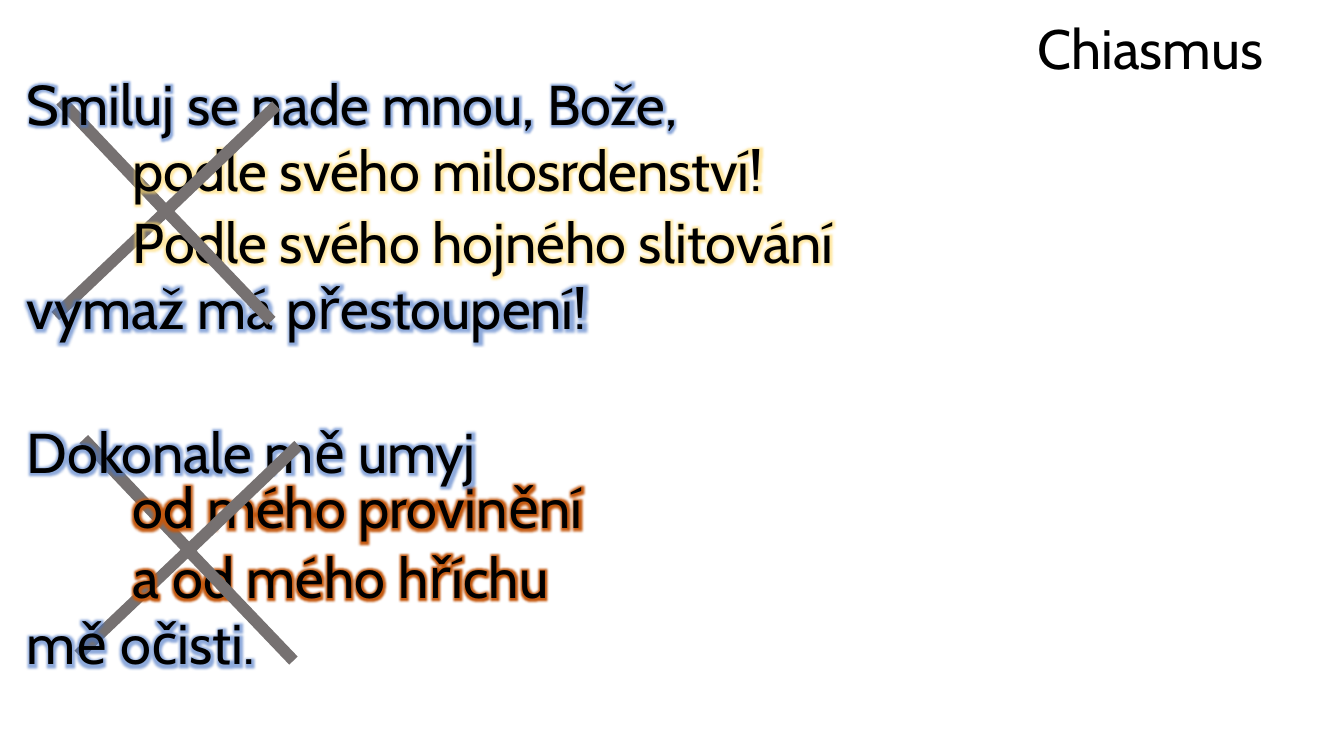
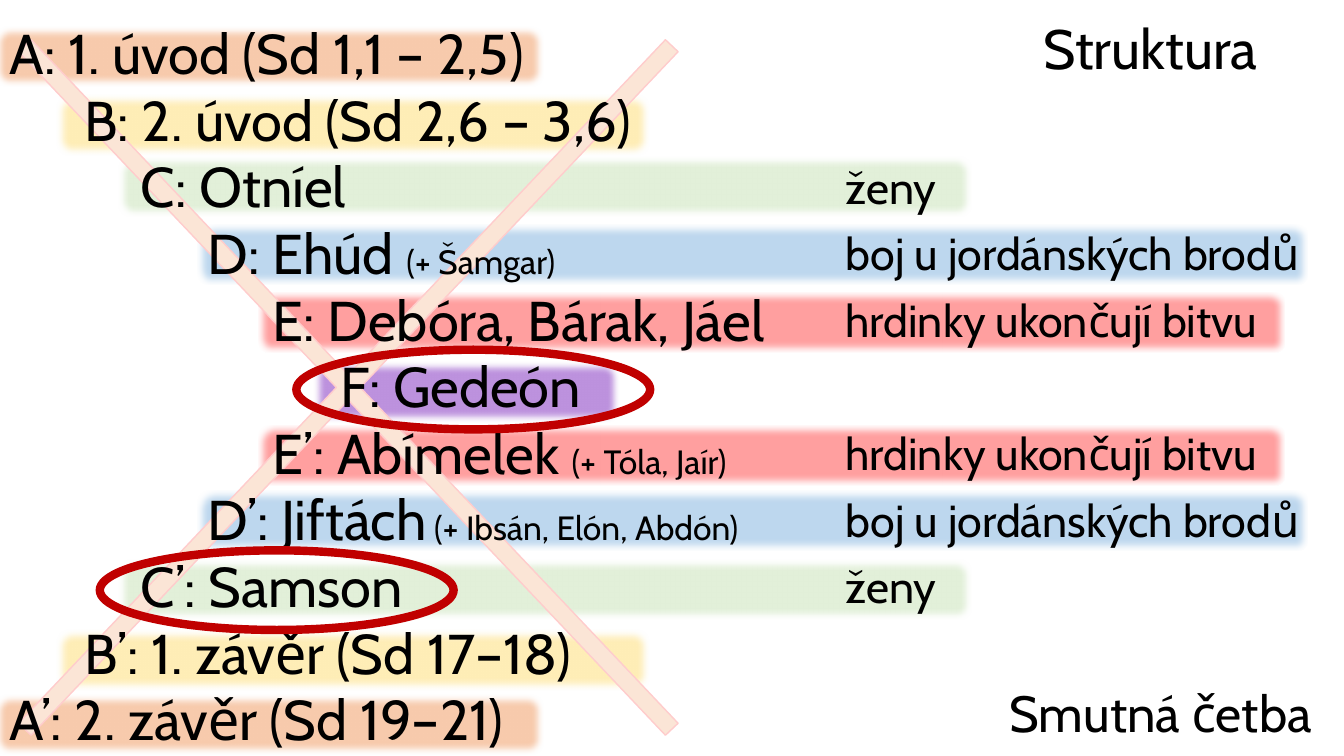
from lxml import etree
from pptx import Presentation
from pptx.dml.color import RGBColor
from pptx.enum.shapes import MSO_SHAPE as Preset
from pptx.enum.text import MSO_ANCHOR as Anchor, PP_ALIGN as Align
from pptx.oxml.ns import qn
from pptx.util import Pt

FONT = "Cabin"
COLOURS = {
    "text": "000000", "cross": "767171", "ring": "C00000",
    "big_cross": "FBE5D6", "big_cross_edge": "FFCCCC",
    "blue_glow": "4472C4", "yellow_glow": "FFD966", "orange_glow": "C55A11",
    "A": "F8CBAD", "B": "FFEEB7", "C": "E2F0D9",
    "D": "BDD7EE", "E": "FF9F9F", "F": "BD92DE",
}
TITLE_BOX = (700.5, 16.5, 242.5, 41)

# Slide 1: verse lines as (text, top, glow); yellow and orange lines are indented
VERSES = [
    ("podle svého milosrdenství!", 96.5, "yellow_glow"),
    ("Podle svého hojného slitování", 148.3, "yellow_glow"),
    ("vymaž má přestoupení!", 195.1, "blue_glow"),
    ("Smiluj se nade mnou, Bože,", 49.7, "blue_glow"),
    ("od mého provinění", 337.7, "orange_glow"),
    ("a od mého hříchu", 387.4, "orange_glow"),
    ("mě očisti.", 434.9, "blue_glow"),
    ("Dokonale mě umyj", 298.1, "blue_glow"),
]
VERSE_PLACES = {"blue_glow": (12.2, 881.3), "yellow_glow": (87.8, 535.7),
                "orange_glow": (87.8, 535.7)}
GLOW_ALPHA = {"blue_glow": 60, "yellow_glow": 60, "orange_glow": 100}

# Each cross is two angles whose corners meet: (left, top) of either half
ANGLE_SIZE = 113
LEFT_ANGLES = [(4.3, 334.1), (-12.2, 92.2)]
RIGHT_ANGLES = [(136.1, 95.8), (151.9, 338.4)]

# Slide 2: rows as (level, label, small addition, theme, label width, band top)
ROWS = [
    ("A", "A: 1. úvod (Sd 1,1 – 2,5)", "", "", 411, 18.7),
    ("B", "B: 2. úvod (Sd 2,6 – 3,6)", "", "", 427, 67.7),
    ("C", "C: Otníel", "", "ženy", 187, 111.6),
    ("D", "D: Ehúd ", "(+ Šamgar)", "boj u jordánských brodů", 366, 160.2),
    ("E", "E: Debóra, Bárak, Jáel", "", "hrdinky ukončují bitvu", 393, 208.8),
    ("F", "F: Gedeón", "", "", 187, 258.5),
    ("E", "E’: Abímelek ", "(+ Tóla, Jaír)", "hrdinky ukončují bitvu", 444, 303.8),
    ("D", "D’: Jiftách", " (+ Ibsán, Elón, Abdón)", "boj u jordánských brodů", 433, 350.3),
    ("C", "C’: Samson", "", "ženy", 217, 399.6),
    ("B", "B’: 1. závěr (Sd 17–18)", "", "", 382, 450),
    ("A", "A’: 2. závěr (Sd 19–21)", "", "", 423, 496.1),
]
ROW_TOP, ROW_STEP, ROW_HEIGHT = 16.5, 47.6, 47.5
LABEL_LEFT = {"A": 0, "B": 53.3, "C": 93.6, "D": 141.1, "E": 187.9, "F": 236.2}
BANDS = {"A": (-3.6, 391.7), "B": (40.3, 423.4), "C": (85, 609.1),
         "D": (141.1, 792.7), "E": (184.3, 733), "F": (223.9, 218.9)}
BAND_HEIGHT = 43.2
THEME_LEFT, THEME_WIDTH = 596.9, 342.7
RINGS = [(211.7, 249.8), (71.3, 393.1)]
CLOSING = ("Smutná četba", (707.8, 493.9, 242.6, 41))


def rgb(name):
    return RGBColor.from_string(COLOURS[name])


def add_effect(properties, tag, radius, colour=None, alpha=100):
    """Add a glow or a soft edge; radius in points, alpha in percent."""
    effects = etree.SubElement(properties, qn("a:effectLst"))
    effect = etree.SubElement(effects, qn("a:" + tag), rad=str(int(Pt(radius))))
    if colour:
        tint = etree.SubElement(effect, qn("a:srgbClr"), val=COLOURS[colour])
        etree.SubElement(tint, qn("a:alpha"), val=str(alpha * 1000))


def add_text(slide, box, runs, align=Align.LEFT, spacing=0.9, glow=None):
    """Add one line of text; runs are (text, size) pairs."""
    frame = slide.shapes.add_textbox(*map(Pt, box)).text_frame
    frame.word_wrap = True
    frame.vertical_anchor = Anchor.MIDDLE
    line = frame.paragraphs[0]
    for key, value in {"alignment": align, "line_spacing": spacing}.items():
        setattr(line, key, value)
    for text, size in runs:
        run = line.add_run()
        run.text = text
        run.font.color.rgb = rgb("text")
        if glow:
            add_effect(run.font._rPr, "glow", 8, glow, GLOW_ALPHA[glow])
        for key, value in {"name": FONT, "size": Pt(size)}.items():
            setattr(run.font, key, value)


def add_figure(slide, preset, box, fill=None, edge=None, edge_width=1, adjust=(), turn=0):
    figure = slide.shapes.add_shape(preset, *map(Pt, box))
    for index, value in enumerate(adjust):
        figure.adjustments[index] = value
    figure.rotation = turn
    if fill:
        figure.fill.solid()
        figure.fill.fore_color.rgb = rgb(fill)
    else:
        figure.fill.background()
    if edge:
        figure.line.color.rgb = rgb(edge)
        figure.line.width = Pt(edge_width)
    else:
        figure.line.fill.background()
    return figure


def add_angles(slide, corners, turn, adjust):
    """Add L shapes; the half frame has the same two adjustments."""
    for left, top in corners:
        angle = add_figure(slide, Preset.HALF_FRAME, (left, top, ANGLE_SIZE, ANGLE_SIZE),
                           "cross", adjust=adjust, turn=turn)
        angle._element.spPr.find(qn("a:prstGeom")).set("prst", "corner")
        angle.shadow.inherit = False


def new_slide(deck, title):
    slide = deck.slides.add_slide(deck.slide_layouts[6])
    add_text(slide, TITLE_BOX, [(title, 39.6)], Align.CENTER)
    return slide


def build_chiasmus(deck):
    slide = new_slide(deck, "Chiasmus")
    add_angles(slide, LEFT_ANGLES, 226.5, (0.075, 0.071))
    for text, top, glow in VERSES:
        left, width = VERSE_PLACES[glow]
        add_text(slide, (left, top, width, 54), [(text, 40)], glow=glow)
    add_angles(slide, RIGHT_ANGLES, 46.3, (0.074, 0.075))


def build_structure(deck):
    slide = new_slide(deck, "Struktura")
    # Bands with soft edges, then the large cross over them
    for level, *_, band_top in ROWS:
        left, width = BANDS[level]
        band = add_figure(slide, Preset.ROUNDED_RECTANGLE,
                          (left, band_top, width, BAND_HEIGHT), level)
        add_effect(band._element.spPr, "softEdge", 5)
    cross = add_figure(slide, Preset.MATH_MULTIPLY, (-195.8, -193, 889.2, 939.6),
                       "big_cross", "big_cross_edge", adjust=(0.014,))
    cross.shadow.inherit = False
    # Labels and themes
    for index, (level, label, addition, theme, width, _) in enumerate(ROWS):
        top = ROW_TOP + index * ROW_STEP
        runs = [(label, 40)] + ([(addition, 24)] if addition else [])
        add_text(slide, (LABEL_LEFT[level], top, width, ROW_HEIGHT), runs)
        if theme:
            add_text(slide, (THEME_LEFT, top, THEME_WIDTH, ROW_HEIGHT), [(theme, 32)])
    # Rings and closing remark
    for left, top in RINGS:
        ring = add_figure(slide, Preset.OVAL, (left, top, 252.7, 56.9),
                          edge="ring", edge_width=6)
        ring.shadow.inherit = False
    text, box = CLOSING
    add_text(slide, box, [(text, 36.3)], Align.CENTER, 0.7)


def main():
    deck = Presentation()
    deck.slide_width, deck.slide_height = Pt(960), Pt(540)
    build_chiasmus(deck)
    build_structure(deck)
    deck.save("out.pptx")


if __name__ == "__main__":
    main()
